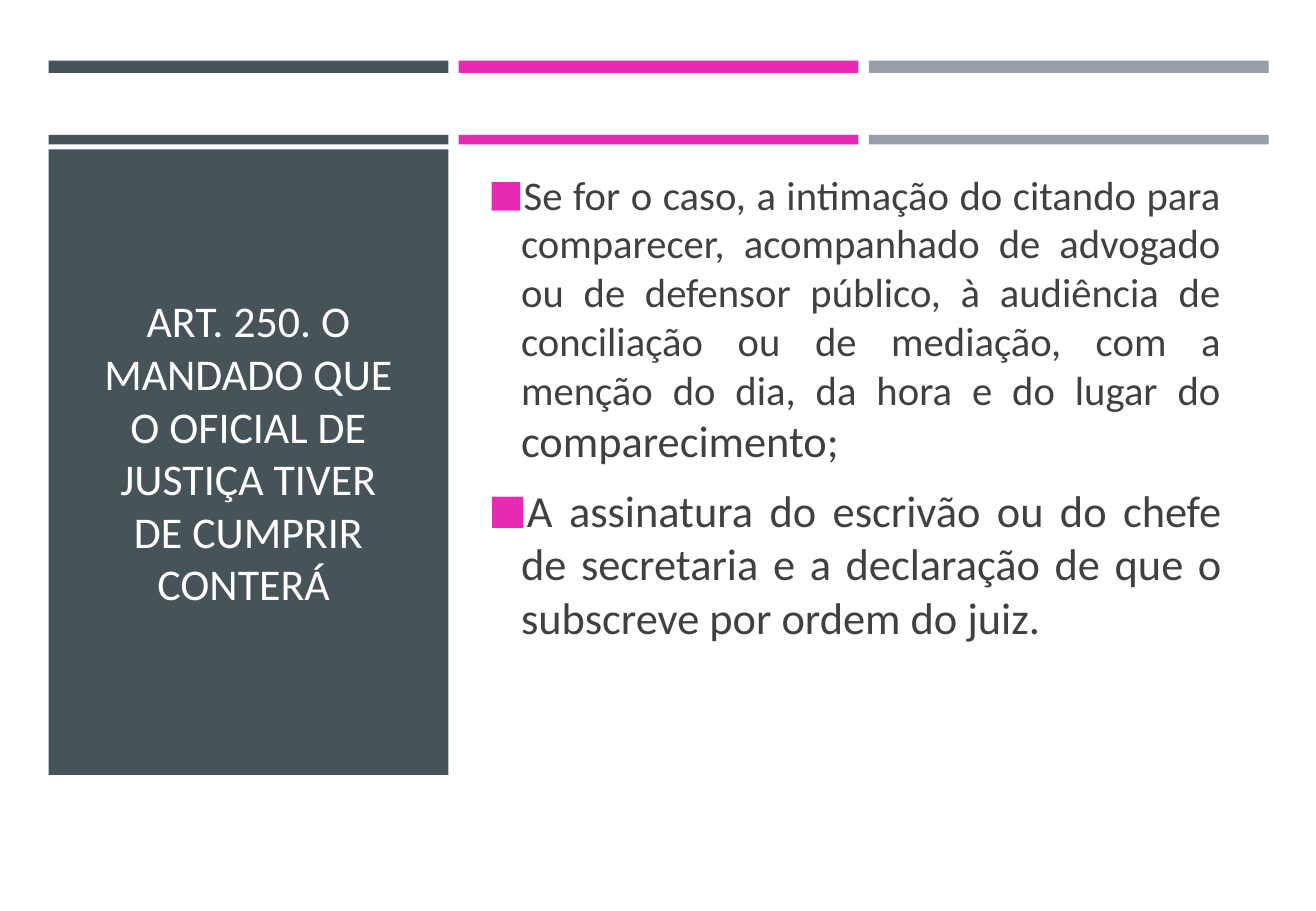
from dataclasses import dataclass

import pptx
import pptx.dml.color
import pptx.enum.shapes
import pptx.enum.text
import pptx.oxml
import pptx.oxml.ns
import pptx.util
from pptx.util import Inches

FONT = "Calibri"
COLORS = {
    "slate": "465359",
    "pink": "E729B4",
    "gray": "969FA7",
    "white": "FFFFFF",
    "text": "404040",
}
COLUMN_LEFT, COLUMN_STEP, COLUMN_WIDTH = 0.4, 3.375, 3.29
BAR_COLORS = ("slate", "pink", "gray")
BULLET_INDENT = 0.27


@dataclass
class BarRow:
    top: float
    height: float


@dataclass
class TextPart:
    text: str
    size: float


BAR_ROWS = [BarRow(0.5, 0.1), BarRow(1.11, 0.08)]
TITLE = TextPart(
    "ART. 250. O MANDADO QUE O OFICIAL DE JUSTIÇA TIVER DE CUMPRIR CONTERÁ\t", 26
)
BULLETS = [
    [
        TextPart(
            "Se for o caso, a intimação do citando para comparecer, acompanhado de "
            "advogado ou de defensor público, à audiência de conciliação ou de "
            "mediação, com a menção do dia, da hora e do lugar do ",
            24.1,
        ),
        TextPart("comparecimento;", 26.3),
    ],
    [
        TextPart(
            "A assinatura do escrivão ou do chefe de secretaria e a declaração de "
            "que o subscreve por ordem do juiz.",
            26.3,
        )
    ],
]


def rgb(name: str) -> pptx.dml.color.RGBColor:
    return pptx.dml.color.RGBColor.from_string(COLORS[name])


def add_block(slide, left: float, top: float, width: float, height: float, color: str) -> None:
    shape = slide.shapes.add_shape(
        pptx.enum.shapes.MSO_SHAPE.RECTANGLE,
        Inches(left), Inches(top), Inches(width), Inches(height),
    )
    shape.shadow.inherit = False
    shape.fill.solid()
    shape.fill.fore_color.rgb = rgb(color)
    shape.line.fill.background()


def add_text_frame(slide, left: float, top: float, width: float, height: float):
    text_frame = slide.shapes.add_textbox(
        Inches(left), Inches(top), Inches(width), Inches(height)
    ).text_frame
    text_frame.word_wrap = True
    text_frame.vertical_anchor = pptx.enum.text.MSO_ANCHOR.MIDDLE
    return text_frame


def format_run(run, size: float, color: str) -> None:
    run.font.name = FONT
    run.font.size = pptx.util.Pt(size)
    run.font.color.rgb = rgb(color)


def add_square_bullet(paragraph) -> None:
    properties = paragraph._p.get_or_add_pPr()
    properties.set("marL", str(Inches(BULLET_INDENT)))
    properties.set("indent", str(-Inches(BULLET_INDENT)))
    namespace = pptx.oxml.ns.nsdecls("a")
    for xml in (
        f'<a:buClr {namespace}><a:srgbClr val="{COLORS["pink"]}"/></a:buClr>',
        f'<a:buSzPct {namespace} val="92000"/>',
        f'<a:buFont {namespace} typeface="{FONT}"/>',
        f'<a:buChar {namespace} char="■"/>',
    ):
        properties.append(pptx.oxml.parse_xml(xml))


def main() -> None:
    presentation = pptx.Presentation()
    presentation.slide_width = Inches(10.83)
    presentation.slide_height = Inches(7.5)
    slide = presentation.slides.add_slide(presentation.slide_layouts[6])

    # Coloured bars
    for row in BAR_ROWS:
        for column, color in enumerate(BAR_COLORS):
            left = COLUMN_LEFT + column * COLUMN_STEP
            add_block(slide, left, row.top, COLUMN_WIDTH, row.height, color)

    # Title panel
    add_block(slide, COLUMN_LEFT, 1.23, COLUMN_WIDTH, 5.15, "slate")
    title_frame = add_text_frame(slide, 0.69, 1.63, 2.71, 4.18)
    title_frame.text = TITLE.text
    title_paragraph = title_frame.paragraphs[0]
    title_paragraph.alignment = pptx.enum.text.PP_ALIGN.CENTER
    format_run(title_paragraph.runs[0], TITLE.size, "white")

    # Bulleted body
    body_frame = add_text_frame(slide, 3.92, 1.63, 6.23, 4.28)
    body_frame.margin_bottom = Inches(0.9)
    for index, parts in enumerate(BULLETS):
        paragraph = body_frame.add_paragraph() if index else body_frame.paragraphs[0]
        paragraph.alignment = pptx.enum.text.PP_ALIGN.JUSTIFY
        paragraph.space_before = paragraph.space_after = pptx.util.Pt(4.9)
        add_square_bullet(paragraph)
        for part in parts:
            run = paragraph.add_run()
            run.text = part.text
            format_run(run, part.size, "text")

    presentation.save("out.pptx")


if __name__ == "__main__":
    main()
